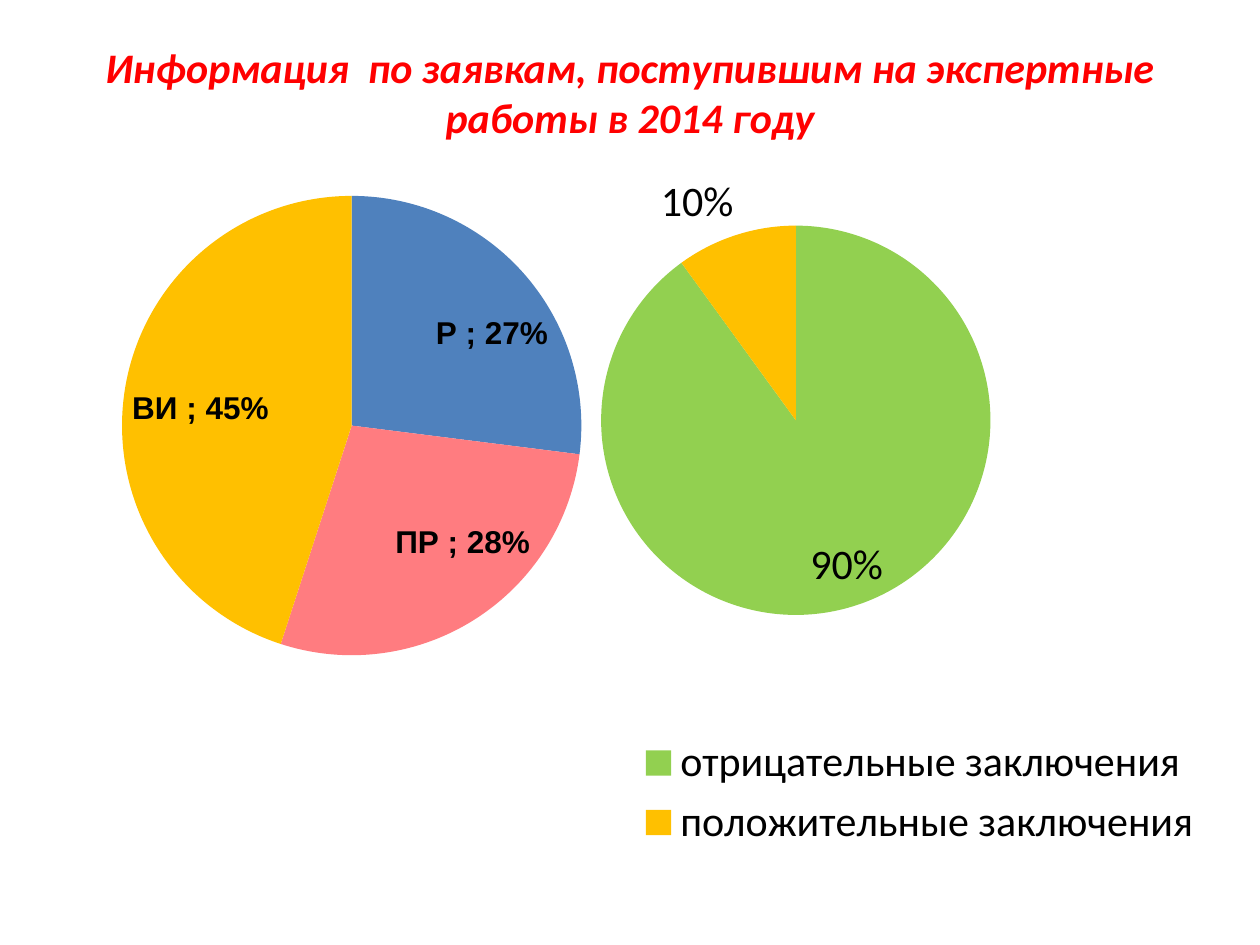
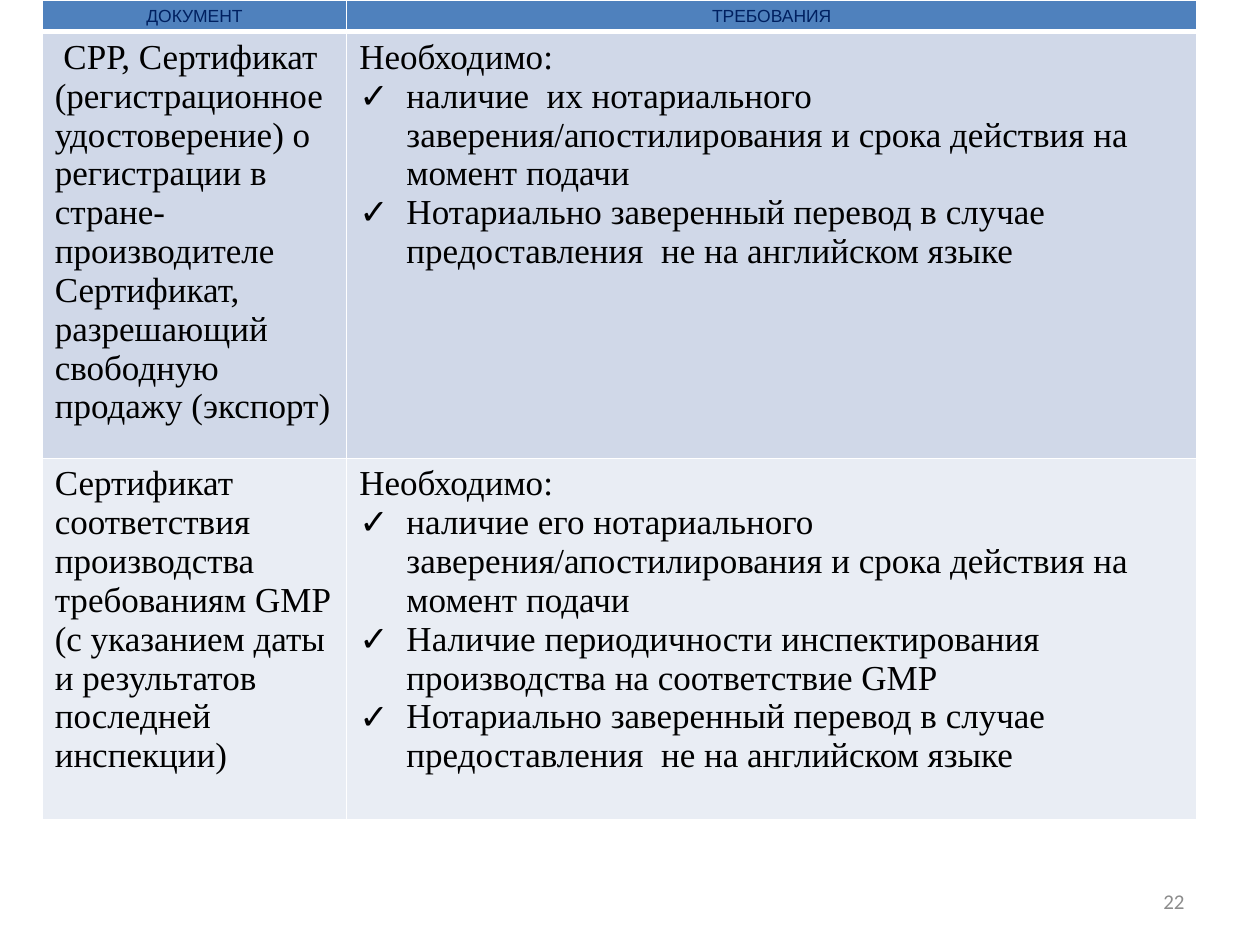
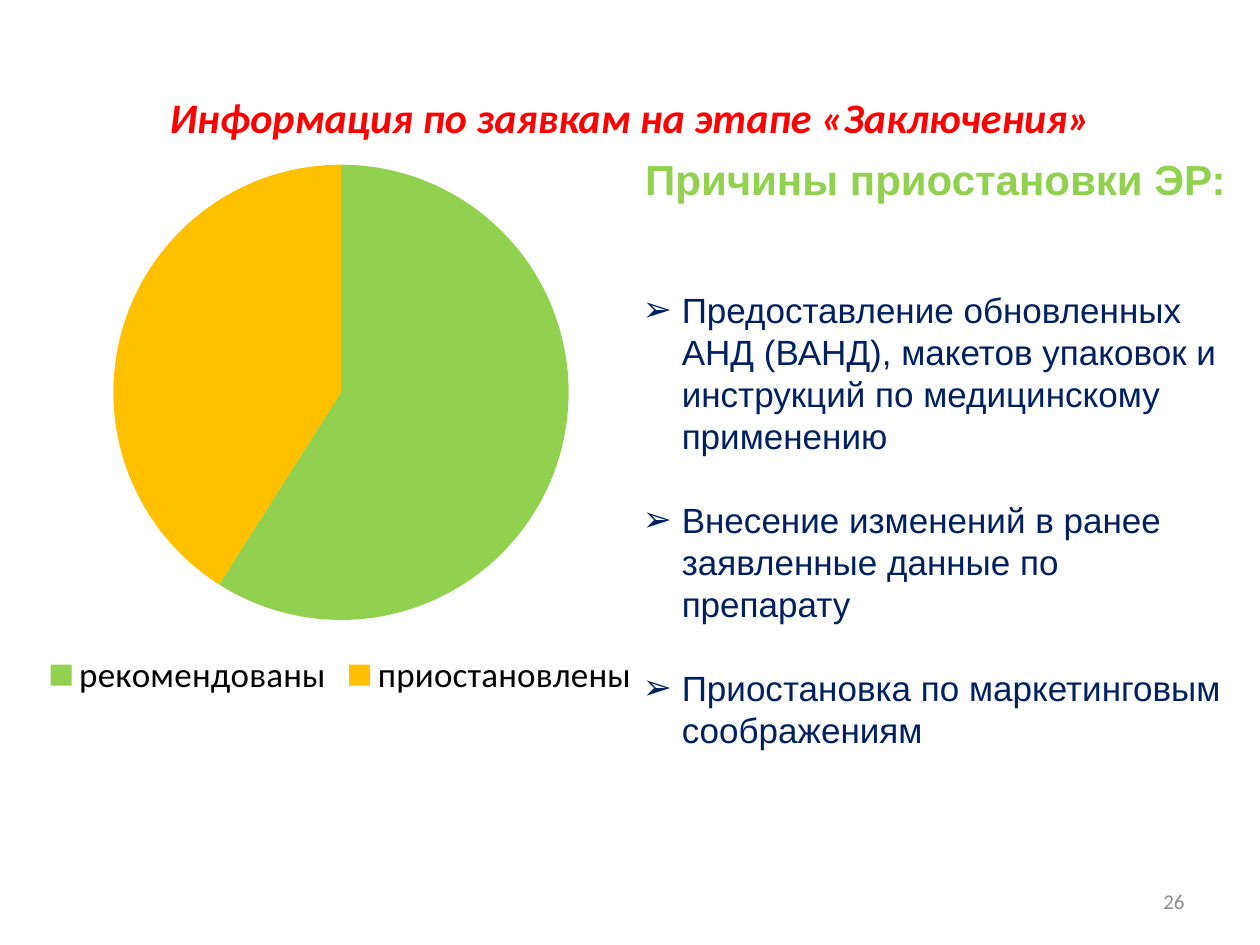
from lxml.etree import SubElement
from pptx import Presentation
from pptx.chart.data import CategoryChartData
from pptx.dml.color import RGBColor
from pptx.enum.chart import XL_CHART_TYPE as ChartType, XL_LABEL_POSITION as LabelPosition, XL_LEGEND_POSITION as LegendPosition
from pptx.enum.text import MSO_ANCHOR as Anchor, MSO_AUTO_SIZE as AutoSize, PP_ALIGN as Align
from pptx.oxml import parse_xml
from pptx.oxml.ns import nsdecls, qn
from pptx.util import Cm, Pt

COLORS = {
    "title": "FF0000", "black": "000000", "white": "FFFFFF", "navy": "002060",
    "number": "8C8C8C", "blue": "4F81BD", "pink": "FF7C80", "amber": "FFC000",
    "green": "92D050", "first_row": "D0D8E8", "second_row": "E9EDF4",
}
TITLE_BOX = Cm(1.27), Cm(0.76), Cm(22.86), Cm(3.18)
NUMBER_BOX = Cm(18.21), Cm(17.65), Cm(5.92), Cm(1.02)
TITLE_STYLE = dict(size=24, color="title", bold=True, italic=True, align=Align.CENTER)


def write(frame, text, size, color, font="Calibri", bold=False, italic=False,
          align=Align.LEFT, bullet=None, indent=0, before=0):
    paragraph = frame.add_paragraph() if frame.text else frame.paragraphs[0]
    paragraph.alignment = align
    paragraph.space_before = Pt(before)
    run = paragraph.add_run()
    run.text = text
    run.font.size = Pt(size)
    run.font.name = font
    run.font.bold = bold
    run.font.italic = italic
    run.font.color.rgb = RGBColor.from_string(COLORS[color])
    properties = paragraph._p.get_or_add_pPr()
    properties.set("marL", str(Cm(indent)))
    properties.set("indent", str(-Cm(indent)))
    if bullet:
        SubElement(properties, qn("a:buFont")).set("typeface", "Arial")
        SubElement(properties, qn("a:buChar")).set("char", bullet)
    else:
        SubElement(properties, qn("a:buNone"))


def add_pie(slide, box, slices, size, number_format="0%", legend_size=None):
    data = CategoryChartData(number_format=number_format)
    data.categories = [name for name, value, color in slices]
    data.add_series("Series 1", [value for name, value, color in slices])
    chart = slide.shapes.add_chart(ChartType.PIE, *box, data).chart
    chart.has_title = False
    chart.font.size = Pt(size)
    chart.font.name = "Calibri"
    chart.font.color.rgb = RGBColor.from_string(COLORS["black"])
    chart.plots[0].vary_by_categories = True
    for index, (name, value, color) in enumerate(slices):
        fill = chart.plots[0].series[0].points[index].format.fill
        fill.solid()
        fill.fore_color.rgb = RGBColor.from_string(COLORS[color])
    chart.has_legend = legend_size is not None
    if legend_size:
        chart.legend.position = LegendPosition.BOTTOM
        chart.legend.include_in_layout = False
        chart.legend.font.size = Pt(legend_size)
    return chart


presentation = Presentation()
presentation.slide_width = Cm(25.4)
presentation.slide_height = Cm(19.05)
layouts = presentation.slide_layouts
received, documents, conclusions = [
    presentation.slides.add_slide(layouts[index]) for index in (5, 6, 1)
]

for slide, text, bottom in (
    (received, "Информация  по заявкам, поступившим на экспертные работы в 2014 году", 1.14),
    (conclusions, "Информация по заявкам на этапе «Заключения»", 0.13),
):
    title = slide.shapes.title
    title.left, title.top, title.width, title.height = TITLE_BOX
    title.text_frame.vertical_anchor = Anchor.MIDDLE
    title.text_frame.margin_bottom = Cm(bottom)
    write(title.text_frame, text, **TITLE_STYLE)

for slide, number in ((documents, "22"), (conclusions, "26")):
    frame = slide.shapes.add_textbox(*NUMBER_BOX).text_frame
    frame.word_wrap = True
    frame.vertical_anchor = Anchor.MIDDLE
    write(frame, number, 12, "number", align=Align.RIGHT)

types_chart = add_pie(
    received, (Cm(2.11), Cm(3.18), Cm(9.96), Cm(10.8)),
    [("Р ", 0.27, "blue"), ("ПР ", 0.28, "pink"), ("ВИ ", 0.45, "amber")], 18)
results_chart = add_pie(
    received, (Cm(11.23), Cm(2.97), Cm(14.81), Cm(14.3)),
    [("отрицательные заключения ", 0.9, "green"), ("положительные заключения ", 0.1, "amber")],
    10, legend_size=24)

inside, outside = LabelPosition.INSIDE_END, LabelPosition.OUTSIDE_END
for chart, size, font, bold, with_names, places in (
    (types_chart, 18, "Arial", True, True,
     [(inside, 0.06, 0.07), (inside, 0.12, -0.1), (inside, 0, 0)]),
    (results_chart, 24, "Calibri", False, False, [(inside, 0.04, -0.01), (outside, 0, 0)]),
):
    series = chart.plots[0].series[0]
    series.data_labels.show_value = True
    series.data_labels.show_category_name = with_names
    for index, (position, x, y) in enumerate(places):
        label = series.points[index].data_label
        label.font.size = Pt(size)
        label.font.name = font
        label.font.bold = bold
        label.position = position
        if x or y:
            chart.element.xpath(f".//c:dLbl/c:idx[@val='{index}']")[0].addnext(parse_xml(
                f"<c:layout {nsdecls('c')}><c:manualLayout>"
                f"<c:x val='{x}'/><c:y val='{y}'/></c:manualLayout></c:layout>"))
    for show_name in chart.element.xpath(".//c:dLbl/c:showCatName"):
        show_name.set("val", str(int(with_names)))
    for show_bubble in chart.element.xpath(".//c:showBubbleSize"):
        show_bubble.addnext(parse_xml(f"<c:separator {nsdecls('c')}>; </c:separator>"))

plot_area = results_chart.element.xpath(".//c:plotArea")[0]
for layout in plot_area.findall(qn("c:layout")):
    plot_area.remove(layout)
layout = parse_xml(f"<c:layout {nsdecls('c')}><c:manualLayout/></c:layout>")
for tag, value in (("layoutTarget", "inner"), ("xMode", "edge"), ("yMode", "edge"),
                   ("x", "0.06"), ("y", "0.11"), ("w", "0.53"), ("h", "0.55")):
    SubElement(layout[0], qn(f"c:{tag}")).set("val", value)
plot_area.insert(0, layout)

rows = [
    (" СРР, Сертификат (регистрационное удостоверение) о регистрации в стране-производителе "
     "Сертификат, разрешающий свободную продажу (экспорт)",
     ["наличие  их нотариального заверения/апостилирования и срока действия на момент подачи",
      "Нотариально заверенный перевод в случае предоставления  не на английском языке"]),
    ("Сертификат соответствия производства требованиям GMP "
     "(c указанием даты и результатов последней инспекции)",
     ["наличие его нотариального заверения/апостилирования и срока действия на момент подачи",
      "Наличие периодичности инспектирования производства на соответствие GMP",
      "Нотариально заверенный перевод в случае предоставления  не на английском языке"]),
]
table = documents.shapes.add_table(3, 2, Cm(0.85), Cm(0), Cm(23.27), Cm(16.03)).table
for column, width in zip(table.columns, (6.14, 17.13)):
    column.width = Cm(width)
for row, height, color in zip(table.rows, (0.64, 8.1, 7.29), ("blue", "first_row", "second_row")):
    row.height = Cm(height)
    for cell in row.cells:
        cell.margin_bottom = Cm(0)
        cell.fill.solid()
        cell.fill.fore_color.rgb = RGBColor.from_string(COLORS[color])
for column, heading in enumerate(("ДОКУМЕНТ", "ТРЕБОВАНИЯ")):
    cell = table.cell(0, column)
    write(cell.text_frame, heading, 10, "navy", font="Arial", align=Align.CENTER)
    cell._tc.get_or_add_tcPr().insert(0, parse_xml(
        f"<a:lnB {nsdecls('a')} w='{Pt(3)}'><a:solidFill>"
        f"<a:srgbClr val='{COLORS['white']}'/></a:solidFill></a:lnB>"))
cell_style = dict(size=20, color="black", font="Times New Roman")
for index, (document, requirements) in enumerate(rows, 1):
    write(table.cell(index, 0).text_frame, document, **cell_style)
    frame = table.cell(index, 1).text_frame
    write(frame, "Необходимо:", **cell_style)
    for requirement in requirements:
        write(frame, requirement, bullet="✓", indent=0.95, **cell_style)

add_pie(conclusions, (Cm(0.42), Cm(2.97), Cm(12.91), Cm(11.22)),
        [("рекомендованы", 59, "green"), ("приостановлены", 41, "amber")],
        18, number_format="General", legend_size=20)

reasons = conclusions.placeholders[1]
reasons.left, reasons.top, reasons.width, reasons.height = Cm(12.7), Cm(2.97), Cm(12.32), Cm(13)
frame = reasons.text_frame
frame.auto_size = AutoSize.NONE
write(frame, "Причины приостановки ЭР:", 24, "green", font="Arial", bold=True, align=Align.CENTER)
for before, reason in (
    (48, "Предоставление обновленных АНД (ВАНД), макетов упаковок и инструкций по медицинскому применению"),
    (24, "Внесение изменений в ранее заявленные данные по препарату"),
    (24, "Приостановка по маркетинговым соображениям"),
):
    write(frame, reason, 20, "navy", font="Arial", bullet="➢", indent=0.79, before=before)

presentation.save("out.pptx")
